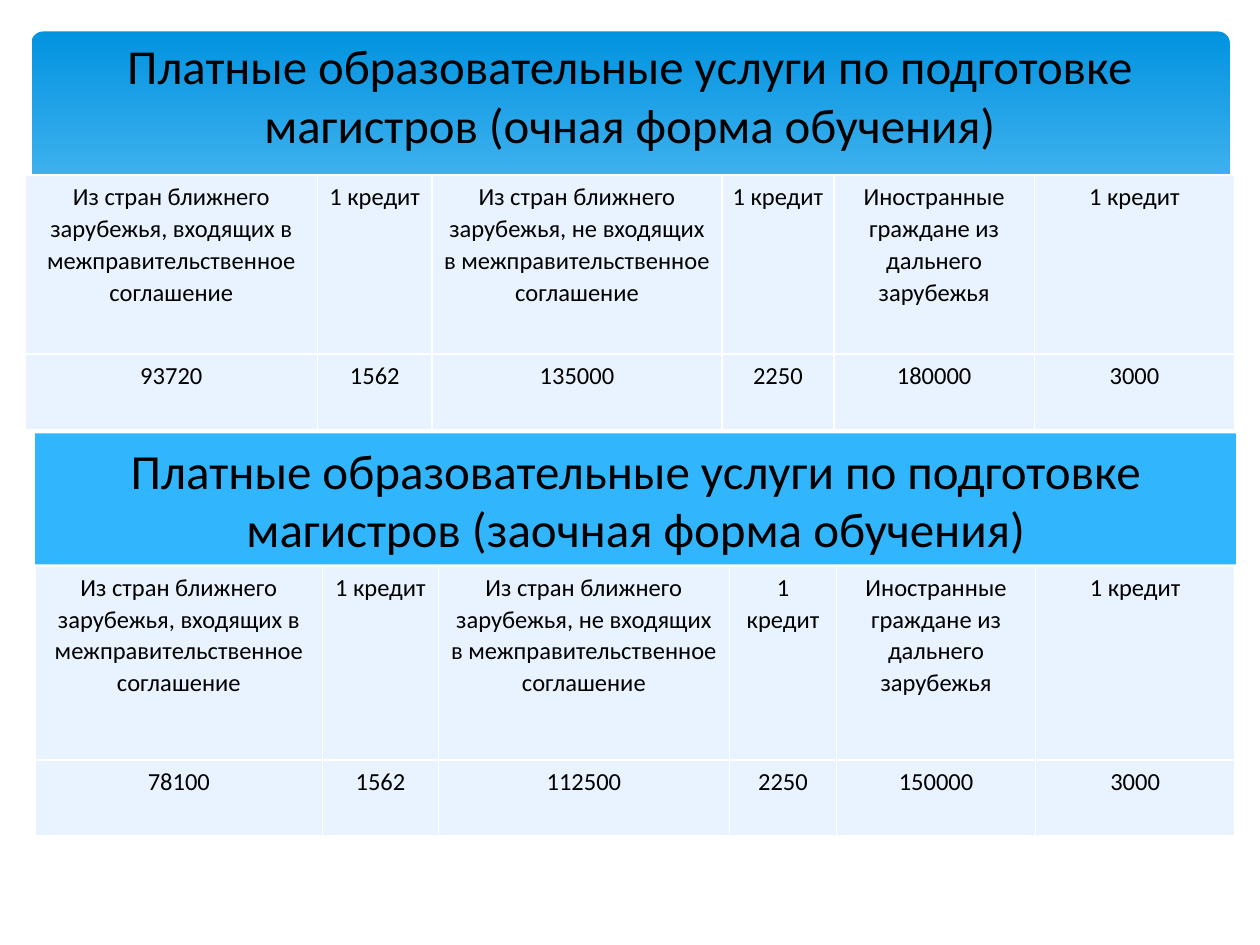
from lxml.etree import SubElement as Sub
from pptx import Presentation
from pptx.dml.color import RGBColor as RGB
from pptx.enum.shapes import MSO_SHAPE as Kind
from pptx.enum.text import MSO_ANCHOR as Anchor, PP_ALIGN as Align
from pptx.oxml.ns import qn
from pptx.util import Inches, Pt

HUES = {"top": "0293E0", "low": "83D3FE", "band": "31B6FD",
        "cell": "E8F3FF", "edge": "FFFFFF", "ink": "000000"}
FONT = "Calibri"
TITLE = "Платные образовательные услуги по подготовке магистров ({} форма обучения)"
CREDIT = "1 кредит"
NEAR = "Из стран ближнего зарубежья, {} в межправительственное соглашение"
HEADS = [NEAR.format("входящих"), CREDIT, NEAR.format("не входящих"), CREDIT,
         "Иностранные граждане из дальнего зарубежья", CREDIT]
DAY = ["93720", "1562", "135000", "2250", "180000", "3000"]
AWAY = ["78100", "1562", "112500", "2250", "150000", "3000"]


def hue(name):
    return RGB.from_string(HUES[name])


def write(frame, text, size, lead=None):
    frame.word_wrap = True
    par = frame.paragraphs[0]
    par.text = text
    par.alignment = Align.CENTER
    par.line_spacing = lead
    font = par.font
    font.name, font.size = FONT, Pt(size)
    font.color.rgb = hue("ink")


def add_block(slide, kind, box):
    block = slide.shapes.add_shape(kind, *map(Inches, box))
    block.shadow.inherit = False
    block.line.fill.background()
    return block


def add_panel(slide, box):
    """Rounded panel that fades downwards."""
    panel = add_block(slide, Kind.ROUNDED_RECTANGLE, box)
    panel.adjustments[0] = 0.034
    fill = panel.fill
    fill.gradient()
    fill.gradient_angle = 270
    for stop, name, place in zip(fill.gradient_stops, ("top", "low"), (0, 0.9)):
        stop.color.rgb = hue(name)
        stop.position = place


def add_band(slide, box, text):
    band = add_block(slide, Kind.RECTANGLE, box)
    band.fill.solid()
    band.fill.fore_color.rgb = hue("band")
    band.text_frame.vertical_anchor = Anchor.MIDDLE
    write(band.text_frame, text, 28)


def add_title(slide, box, text):
    frame = slide.shapes.add_textbox(*map(Inches, box)).text_frame
    frame.vertical_anchor = Anchor.MIDDLE
    write(frame, text, 27.9)


def add_edges(cell):
    props = cell._tc.get_or_add_tcPr()
    for side in ("lnL", "lnR", "lnT", "lnB"):
        line = Sub(props, qn("a:" + side), w=str(Pt(1)))
        Sub(Sub(line, qn("a:solidFill")), qn("a:srgbClr"), val=HUES["edge"])


def style(cell, text):
    cell.margin_left = cell.margin_right = Pt(5.4)
    cell.margin_top = cell.margin_bottom = Inches(0.04)
    add_edges(cell)
    cell.fill.solid()
    cell.fill.fore_color.rgb = hue("cell")
    write(cell.text_frame, text, 14, 1.07)


def add_prices(slide, left, top, cols, rows, prices):
    table = slide.shapes.add_table(
        len(rows), len(cols), Inches(left), Inches(top),
        Inches(sum(cols)), Inches(sum(rows))).table
    table.first_row = table.horz_banding = False
    for col, width in zip(table.columns, cols):
        col.width = Inches(width)
    for row, height, texts in zip(table.rows, rows, (HEADS, prices)):
        row.height = Inches(height)
        for cell, text in zip(row.cells, texts):
            style(cell, text)


def main():
    deck = Presentation()
    deck.slide_width, deck.slide_height = Inches(10), Inches(7.5)
    slide = deck.slides.add_slide(deck.slide_layouts[6])
    add_panel(slide, (0.25, 0.25, 9.51, 2.7))
    add_prices(slide, 0.2, 1.39, (2.32, 0.91, 2.3, 0.89, 1.59, 1.59),
               (1.42, 0.6), DAY)
    add_title(slide, (0.5, 0.25, 9, 1), TITLE.format("очная"))
    add_band(slide, (0.28, 3.44, 9.53, 1.04), TITLE.format("заочная"))
    add_prices(slide, 0.28, 4.49, (2.28, 0.92, 2.31, 0.85, 1.58, 1.58),
               (1.54, 0.6), AWAY)
    deck.save("out.pptx")


if __name__ == "__main__":
    main()
